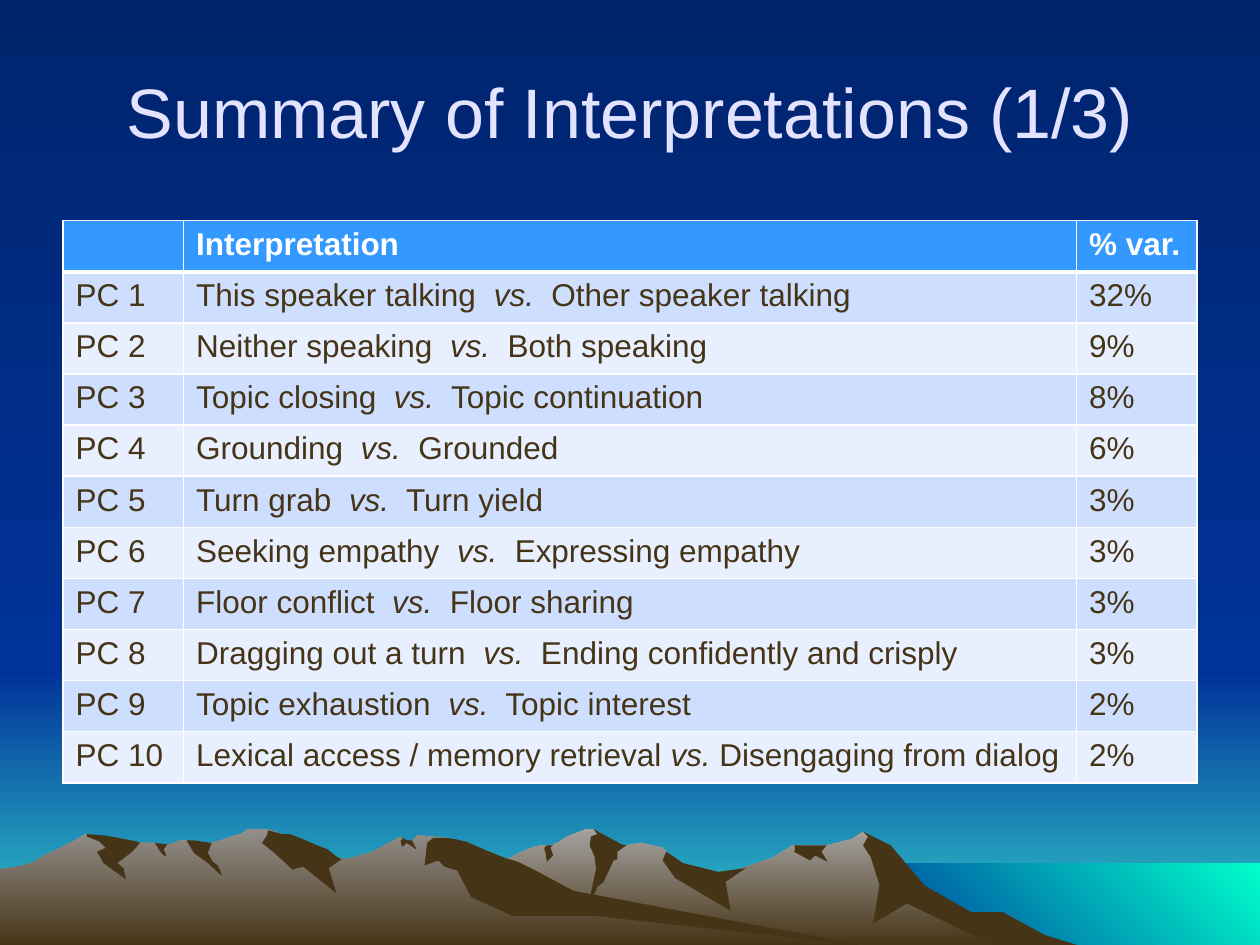
from dataclasses import dataclass

from lxml import etree
from pptx import Presentation, util as u
from pptx.dml.color import RGBColor
from pptx.enum import text
from pptx.oxml.ns import qn


@dataclass(frozen=True)
class Theme:
    font: str = "Arial"
    title_size: int = 40
    table_size: int = 18
    title: str = "E3E3FF"
    white: str = "FFFFFF"
    header: str = "3399FF"
    bands: tuple = ("CEDEFF", "E8EFFF")
    rock: str = "463416"
    sky: tuple = ("00246D", "003399")
    horizon: tuple = ("003399", "33CCCC")
    sea: tuple = ("003399", "00FFCC")
    far_ridge: tuple = ("A5A29F", "463416")
    near_ridge: tuple = ("938F8B", "463416")


THEME = Theme()
DOWN, UP_RIGHT = 270, 45
GRID = u.Cm(0.0254)  # one unit of the landscape outlines

FAR_RIDGE = [
    (802, 740), (778, 727), (764, 723), (723, 698), (702, 671), (685, 660), (676, 666),
    (656, 671), (629, 671), (613, 681), (566, 697), (536, 690), (529, 676), (526, 673),
    (509, 669), (497, 671), (486, 673), (474, 661), (471, 658), (465, 658), (450, 664),
    (444, 668), (438, 671), (430, 671), (424, 672), (412, 677), (405, 681), (394, 685),
    (355, 698), (327, 709), (277, 739), (258, 751), (821, 751)]
FAR_SHADOWS = [
    [(796, 724), (771, 724), (734, 703), (707, 671), (685, 660), (689, 664), (685, 671),
     (691, 680), (698, 702), (693, 733), (720, 717), (792, 752), (858, 751), (829, 742)],
    [(471, 658), (474, 662), (469, 664), (468, 671), (472, 680), (473, 690), (465, 727),
     (474, 704), (479, 700), (487, 683), (490, 682), (490, 676), (497, 671), (493, 670)],
    [(529, 676), (528, 678), (526, 683), (536, 697), (580, 723), (576, 700), (592, 689),
     (570, 692), (542, 685)],
    [(650, 671), (630, 671), (631, 672), (631, 675), (630, 676), (643, 683), (647, 679),
     (657, 684), (652, 676), (656, 671)],
    [(433, 677), (432, 673), (434, 671), (438, 671), (439, 670), (437, 673), (439, 679),
     (434, 684)],
]
NEAR_RIDGE = [
    (690, 751), (667, 748), (432, 712), (354, 665), (331, 663), (327, 668), (323, 668),
    (318, 664), (296, 676), (279, 681), (271, 682), (260, 676), (236, 681), (223, 663),
    (219, 660), (212, 658), (196, 658), (191, 662), (186, 663), (178, 666), (168, 669),
    (160, 671), (148, 667), (143, 667), (132, 671), (128, 671), (123, 669), (111, 669),
    (94, 671), (68, 662), (56, 669), (46, 674), (35, 679), (26, 685), (14, 688),
    (0, 690), (0, 751)]
NEAR_SHADOWS = [
    [(212, 663), (208, 669), (219, 678), (232, 690), (241, 688), (267, 709), (261, 689),
     (271, 682), (266, 679), (260, 674), (252, 671), (238, 665), (230, 662), (224, 662),
     (213, 659)],
    [(370, 668), (361, 666), (354, 665), (344, 665), (339, 669), (337, 687), (348, 683),
     (353, 688), (363, 691), (374, 712), (407, 727), (472, 727), (690, 751), (683, 750),
     (455, 707), (427, 692), (411, 684), (401, 681), (386, 675)],
    [(318, 667), (320, 666), (318, 664), (323, 667), (327, 667), (330, 673), (330, 674),
     (326, 671), (322, 669), (321, 671), (319, 672)],
    [(154, 667), (161, 668), (168, 669), (165, 677), (169, 684), (173, 687), (176, 694),
     (176, 695), (165, 685), (154, 677), (148, 667)],
    [(133, 670), (130, 674), (132, 679), (132, 680), (129, 678), (126, 674), (123, 669)],
    [(109, 668), (111, 669), (105, 676), (93, 685), (98, 689), (100, 698), (82, 685),
     (77, 676), (84, 673), (79, 668), (69, 664), (69, 662), (82, 663), (94, 665)],
]

HEADINGS = ("", "Interpretation", "% var.")
INTERPRETATIONS = [
    ("This speaker talking  vs.  Other speaker talking", 32),
    ("Neither speaking  vs.  Both speaking", 9),
    ("Topic closing  vs.  Topic continuation", 8),
    ("Grounding  vs.  Grounded", 6),
    ("Turn grab  vs.  Turn yield", 3),
    ("Seeking empathy  vs.  Expressing empathy", 3),
    ("Floor conflict  vs.  Floor sharing", 3),
    ("Dragging out a turn  vs.  Ending confidently and crisply", 3),
    ("Topic exhaustion  vs.  Topic interest", 2),
    ("Lexical access / memory retrieval vs. Disengaging from dialog", 2),
]


def paint(fill, colour, angle=DOWN):
    """Fill with one colour, or with a gradient if given a pair."""
    if isinstance(colour, str):
        fill.solid()
        fill.fore_color.rgb = RGBColor.from_string(colour)
        return
    fill.gradient()
    fill.gradient_angle = angle
    for stop, position, value in zip(fill.gradient_stops, (0, 1), colour):
        stop.position = position
        stop.color.rgb = RGBColor.from_string(value)


def add_outline(slide, points, colour, angle=DOWN):
    builder = slide.shapes.build_freeform(*points[0], scale=GRID)
    builder.add_line_segments(points[1:], close=True)
    shape = builder.convert_to_shape()
    shape.shadow.inherit = False
    shape.line.fill.background()
    paint(shape.fill, colour, angle)


def add_block(slide, left, top, right, bottom, colour, angle=DOWN):
    corners = [(left, top), (right, top), (right, bottom), (left, bottom)]
    add_outline(slide, corners, colour, angle)


def add_landscape(slide):
    add_block(slide, 0, 533, 1000, 750, THEME.horizon)
    add_block(slide, 0, 0, 1000, 533, THEME.sky)
    add_block(slide, 683, 685, 1000, 752, THEME.sea, UP_RIGHT)
    for ridge, colour, shadows in ((FAR_RIDGE, THEME.far_ridge, FAR_SHADOWS),
                                   (NEAR_RIDGE, THEME.near_ridge, NEAR_SHADOWS)):
        add_outline(slide, ridge, colour)
        for shadow in shadows:
            add_outline(slide, shadow, THEME.rock)


def add_run(paragraph, words, colour, **values):
    run = paragraph.add_run()
    run.text = words
    run.font.color.rgb = RGBColor.from_string(colour)
    for name, value in {"name": THEME.font, **values}.items():
        setattr(run.font, name, value)


def add_title(slide, words):
    box = slide.shapes.add_textbox(u.Cm(1.27), u.Cm(0.64), u.Cm(22.86), u.Cm(3.18))
    frame = box.text_frame
    frame.word_wrap = True
    frame.vertical_anchor = text.MSO_ANCHOR.MIDDLE
    paragraph = frame.paragraphs[0]
    paragraph.alignment = text.PP_ALIGN.CENTER
    add_run(paragraph, words, THEME.title, size=u.Pt(THEME.title_size))


def set_borders(cell, bottom):
    properties = cell._tc.get_or_add_tcPr()
    for index, (side, width) in enumerate({"L": 1, "R": 1, "T": 1, "B": bottom}.items()):
        line = etree.Element(qn(f"a:ln{side}"), w=str(u.Pt(width)))
        fill = etree.SubElement(line, qn("a:solidFill"))
        etree.SubElement(fill, qn("a:srgbClr"), val=THEME.white)
        properties.insert(index, line)


def fill_cell(cell, words, fill, colour, bold=False, bottom=1):
    """Write a cell, with any "vs." in italics."""
    paint(cell.fill, fill)
    set_borders(cell, bottom)
    paragraph = cell.text_frame.paragraphs[0]
    for part in words.partition("vs."):
        if part:
            add_run(paragraph, part, colour, size=u.Pt(THEME.table_size),
                    bold=bold, italic=part == "vs.")


def add_interpretations(slide):
    widths, row_height = (2.43, 18, 2.43), 1.03
    count = len(INTERPRETATIONS) + 1
    table = slide.shapes.add_table(count, len(widths), u.Cm(1.27), u.Cm(4.45),
                                   u.Cm(sum(widths)), u.Cm(row_height * count)).table
    table.horz_banding = False
    for column, width in zip(table.columns, widths):
        column.width = u.Cm(width)
    for row in table.rows:
        row.height = u.Cm(row_height)
    for column, heading in enumerate(HEADINGS):
        fill_cell(table.cell(0, column), heading, THEME.header, THEME.white, True, 3)
    for number, (meaning, share) in enumerate(INTERPRETATIONS, 1):
        band = THEME.bands[(number - 1) % 2]
        for column, words in enumerate((f"PC {number}", meaning, f"{share}%")):
            fill_cell(table.cell(number, column), words, band, THEME.rock)


def main():
    presentation = Presentation()
    presentation.slide_width, presentation.slide_height = u.Cm(25.4), u.Cm(19.05)
    slide = presentation.slides.add_slide(presentation.slide_layouts[6])
    paint(slide.background.fill, THEME.sky)
    add_landscape(slide)
    add_title(slide, "Summary of Interpretations (1/3)")
    add_interpretations(slide)
    presentation.save("out.pptx")


if __name__ == "__main__":
    main()
